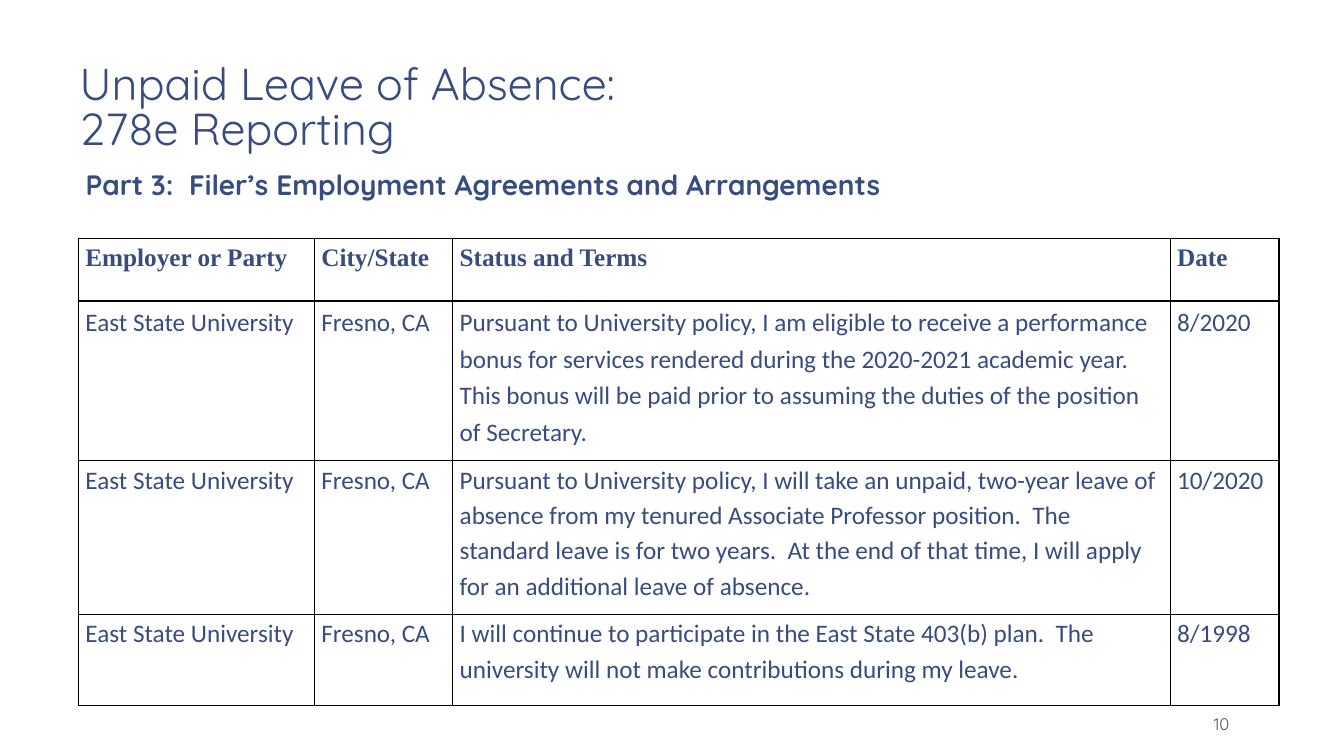
from dataclasses import dataclass

from lxml import etree
from pptx import Presentation
from pptx.dml.color import RGBColor
from pptx.enum.text import MSO_ANCHOR, MSO_AUTO_SIZE, PP_ALIGN
from pptx.oxml.ns import qn
from pptx.slide import Slide
from pptx.table import _Cell
from pptx.text.text import TextFrame
from pptx.util import Pt

LEFT, RIGHT = PP_ALIGN.LEFT, PP_ALIGN.RIGHT
TOP, BOTTOM = MSO_ANCHOR.TOP, MSO_ANCHOR.BOTTOM
NO_FIT, GROW = MSO_AUTO_SIZE.NONE, MSO_AUTO_SIZE.SHAPE_TO_FIT_TEXT


@dataclass(frozen=True)
class Theme:
    navy: str = "374C81"
    grey: str = "595959"
    border: str = "000000"
    display_font: str = "Quicksand"
    header_font: str = "Times New Roman"
    body_font: str = "Calibri"
    title_size: float = 32
    subtitle_size: float = 20
    table_size: float = 18
    number_size: float = 12
    border_width: float = 1


@dataclass(frozen=True)
class Box:
    left: float
    top: float
    width: float
    height: float

    def points(self) -> tuple[Pt, Pt, Pt, Pt]:
        return Pt(self.left), Pt(self.top), Pt(self.width), Pt(self.height)


@dataclass(frozen=True)
class Agreement:
    """One row of the table."""
    employer: str
    city: str
    terms: str
    date: str
    height: float
    line_spacing: float = 1.15
    font: str = Theme.body_font
    bold: bool = False


THEME = Theme()
TITLE_BOX = Box(47.5, 5.8, 840, 110)
SUBTITLE_BOX = Box(54, 116, 766, 31.5)
NUMBER_BOX = Box(800.6, 504, 87, 25)
TABLE_LEFT, TABLE_TOP = 56, 170.4
COLUMN_WIDTHS = (168.6, 98.8, 512.5, 77.8)
WIDE_INSETS = (9.4, 5, 9.4, 5)
TEXT_INSETS = (7.2, 3.6, 7.2, 3.6)
CELL_INSETS = (5, 0, 5, 0)

AGREEMENTS = (
    Agreement("Employer or Party", "City/State", "Status and Terms", "Date",
              44.6, 1.2, THEME.header_font, True),
    Agreement("East State University", "Fresno, CA",
              "Pursuant to University policy, I am eligible to receive a performance "
              "bonus for services rendered during the 2020-2021 academic year.  This "
              "bonus will be paid prior to assuming the duties of the position of "
              "Secretary.", "8/2020", 114, 1.2),
    Agreement("East State University", "Fresno, CA",
              "Pursuant to University policy, I will take an unpaid, two-year leave of "
              "absence from my tenured Associate Professor position.  The standard "
              "leave is for two years.  At the end of that time, I will apply for an "
              "additional leave of absence.", "10/2020", 109.8),
    Agreement("East State University", "Fresno, CA",
              "I will continue to participate in the East State 403(b) plan.  The "
              "university will not make contributions during my leave.",
              "8/1998", 65.2),
)


def write(frame: TextFrame, text: str, *, size: float, font: str = THEME.display_font,
          color: str = THEME.navy, bold: bool = False, align: PP_ALIGN = LEFT,
          line_spacing: float = 1.0, space_after: float = 0) -> None:
    """Fill the first paragraph; a newline becomes a line break."""
    paragraph = frame.paragraphs[0]
    paragraph.alignment = align
    paragraph.line_spacing = line_spacing
    paragraph.space_before = Pt(0)
    paragraph.space_after = Pt(space_after)
    for index, line in enumerate(text.split("\n")):
        if index:
            paragraph.add_line_break()
        run = paragraph.add_run()
        run.text = line
        run.font.name = font
        run.font.size = Pt(size)
        run.font.bold = bold
        run.font.color.rgb = RGBColor.from_string(color)


def set_insets(holder: TextFrame | _Cell, insets: tuple[float, ...]) -> None:
    (holder.margin_left, holder.margin_top,
     holder.margin_right, holder.margin_bottom) = map(Pt, insets)


def set_frame(frame: TextFrame, insets: tuple[float, ...], anchor: MSO_ANCHOR,
              fit: MSO_AUTO_SIZE = NO_FIT) -> None:
    frame.word_wrap = True
    frame.auto_size = fit
    frame.vertical_anchor = anchor
    set_insets(frame, insets)


def add_title(slide: Slide, text: str) -> None:
    title = slide.shapes.title
    title.left, title.top, title.width, title.height = TITLE_BOX.points()
    set_frame(title.text_frame, WIDE_INSETS, BOTTOM)
    write(title.text_frame, text, size=THEME.title_size, line_spacing=0.85)


def add_text(slide: Slide, box: Box, insets: tuple[float, ...], anchor: MSO_ANCHOR,
             fit: MSO_AUTO_SIZE = NO_FIT) -> TextFrame:
    frame = slide.shapes.add_textbox(*box.points()).text_frame
    set_frame(frame, insets, anchor, fit)
    return frame


def set_borders(cell: _Cell) -> None:
    properties = cell._tc.get_or_add_tcPr()
    for side in ("a:lnL", "a:lnR", "a:lnT", "a:lnB"):
        line = etree.SubElement(properties, qn(side), w=str(Pt(THEME.border_width)))
        fill = etree.SubElement(line, qn("a:solidFill"))
        etree.SubElement(fill, qn("a:srgbClr"), val=THEME.border)


def add_agreement_table(slide: Slide) -> None:
    box = Box(TABLE_LEFT, TABLE_TOP, sum(COLUMN_WIDTHS),
              sum(agreement.height for agreement in AGREEMENTS))
    table = slide.shapes.add_table(
        len(AGREEMENTS), len(COLUMN_WIDTHS), *box.points()).table
    table.horz_banding = False
    for column, width in zip(table.columns, COLUMN_WIDTHS):
        column.width = Pt(width)
    for row, agreement in zip(table.rows, AGREEMENTS):
        row.height = Pt(agreement.height)
        entries = (agreement.employer, agreement.city, agreement.terms, agreement.date)
        for cell, entry in zip(row.cells, entries):
            set_borders(cell)
            cell.fill.background()
            cell.vertical_anchor = TOP
            set_insets(cell, CELL_INSETS)
            write(cell.text_frame, entry, size=THEME.table_size, font=agreement.font,
                  bold=agreement.bold, line_spacing=agreement.line_spacing,
                  space_after=10)


def main() -> None:
    deck = Presentation()
    deck.slide_width, deck.slide_height = Pt(960), Pt(540)
    title_only = deck.slide_layouts.get_by_name("Title Only")
    slide = deck.slides.add_slide(title_only)

    add_title(slide, "Unpaid Leave of Absence:\n278e Reporting")
    page_number = add_text(slide, NUMBER_BOX, WIDE_INSETS, BOTTOM)
    write(page_number, "10", size=THEME.number_size, color=THEME.grey, align=RIGHT)
    subtitle = add_text(slide, SUBTITLE_BOX, TEXT_INSETS, TOP, GROW)
    write(subtitle, "Part 3:  Filer’s Employment Agreements and Arrangements",
          size=THEME.subtitle_size, bold=True)
    add_agreement_table(slide)

    deck.save("out.pptx")


if __name__ == "__main__":
    main()
